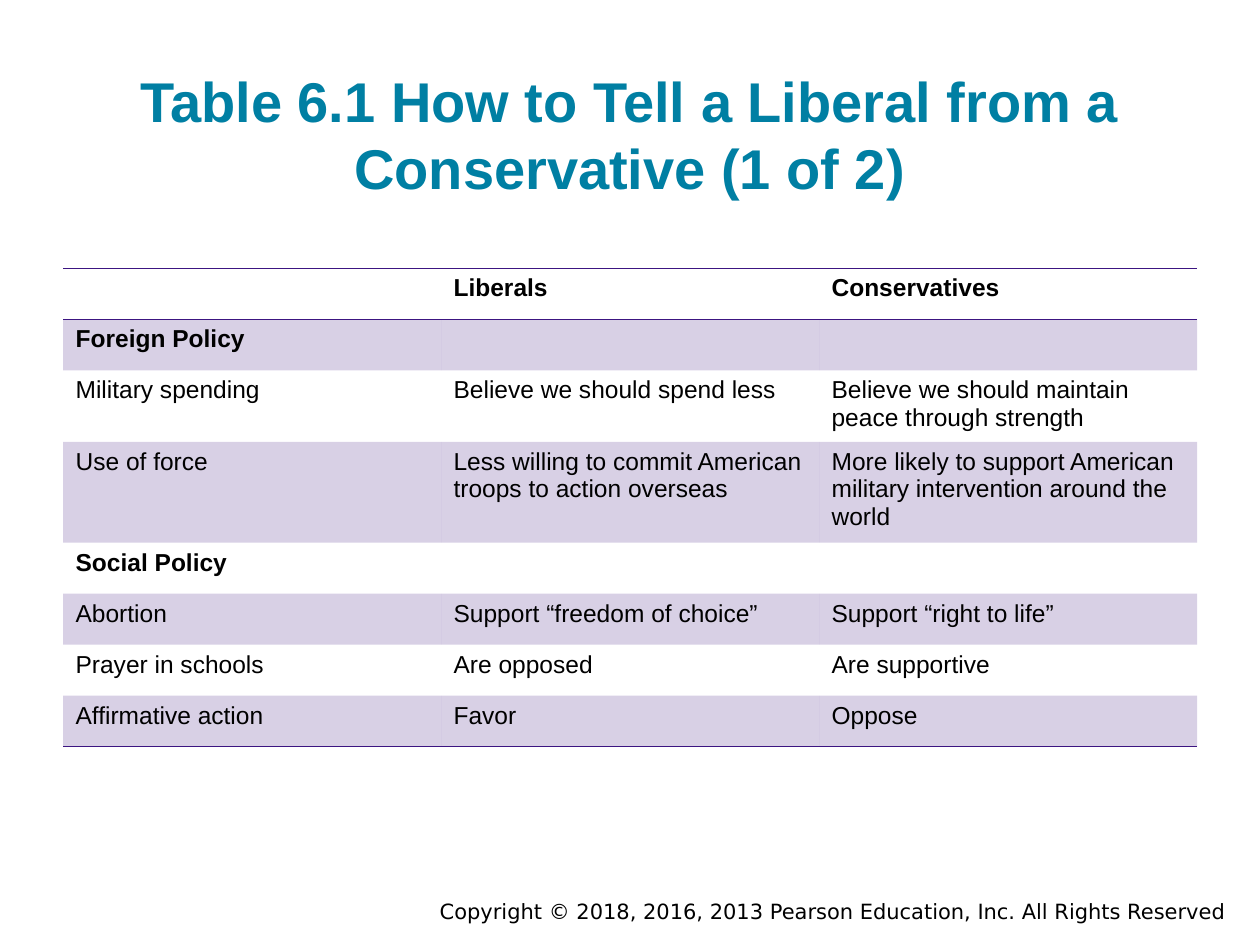
from lxml import etree
from pptx import Presentation
from pptx import util as u
from pptx.dml.color import RGBColor
from pptx.enum import text
from pptx.oxml import ns

TEAL = RGBColor(0x00, 0x7F, 0xA3)
PLUM = RGBColor(0x3C, 0x15, 0x81)
BLACK = RGBColor(0, 0, 0)
NO_STYLE = "{2D5ABB26-0587-4C30-8999-92F81FD0307C}"

deck = Presentation()
deck.slide_width, deck.slide_height = u.Inches(10), u.Inches(7.5)
W, H = deck.slide_width, deck.slide_height
slide = deck.slides.add_slide(deck.slide_layouts[6])


def write(frame, words, size=14, bold=False, color=BLACK, face="Arial",
          align=text.PP_ALIGN.LEFT):
    para = frame.paragraphs[0]
    para.alignment = align
    para.font.size = u.Pt(size)
    if words:
        run = para.add_run()
        run.text = words
        font = run.font
        font.size, font.bold, font.name = u.Pt(size), bold, face
        font.color.rgb = color


def rule(cell, side):
    line = etree.SubElement(cell._tc.get_or_add_tcPr(), ns.qn("a:" + side),
                            w=str(u.Pt(1)))
    fill = etree.SubElement(line, ns.qn("a:solidFill"))
    etree.SubElement(fill, ns.qn("a:srgbClr"), val=str(PLUM))


# Copyright line
foot = slide.shapes.add_textbox(int(W * 0.2), int(H * 0.944),
                                int(W * 0.783), int(H * 0.04)).text_frame
foot.word_wrap = True
write(foot, "Copyright © 2018, 2016, 2013 Pearson Education, Inc. All Rights Reserved",
      size=12, face="DejaVu Sans", align=text.PP_ALIGN.RIGHT)

# Title
head = slide.shapes.add_textbox(int(W * 0.05), int(H * 0.056),
                                int(W * 0.9), int(H * 0.17)).text_frame
head.word_wrap = True
head.vertical_anchor = text.MSO_ANCHOR.BOTTOM
head.margin_top = head.margin_bottom = u.Inches(0.1)
write(head, "Table 6.1 How to Tell a Liberal from a Conservative (1 of 2)",
      size=32, bold=True, color=TEAL, align=text.PP_ALIGN.CENTER)

# Comparison table
ROWS = [
    ("", "Liberals", "Conservatives"),
    ("Foreign Policy", "", ""),
    ("Military spending", "Believe we should spend less",
     "Believe we should maintain peace through strength"),
    ("Use of force", "Less willing to commit American troops to action overseas",
     "More likely to support American military intervention around the world"),
    ("Social Policy", "", ""),
    ("Abortion", "Support “freedom of choice”", "Support “right to life”"),
    ("Prayer in schools", "Are opposed", "Are supportive"),
    ("Affirmative action", "Favor", "Oppose"),
]
HEADS = ("Foreign Policy", "Social Policy")
last = len(ROWS) - 1
row_h = int(H * 0.054)
grid = slide.shapes.add_table(len(ROWS), 3, int(W * 0.05), int(H * 0.284),
                              int(W * 0.9), row_h * len(ROWS)).table
grid._tbl.tblPr.find(ns.qn("a:tableStyleId")).text = NO_STYLE

for r, row in enumerate(ROWS):
    grid.rows[r].height = row_h
    for c, words in enumerate(row):
        cell = grid.cell(r, c)
        write(cell.text_frame, words, bold=r == 0 or words in HEADS)
        if r == 0:
            rule(cell, "lnT")
        if r in (0, last):
            rule(cell, "lnB")
        # Odd rows carry a 20 % tint
        if r % 2:
            cell.fill.solid()
            cell.fill.fore_color.rgb = PLUM
            tint = cell._tc.tcPr.find(ns.qn("a:solidFill"))[0]
            etree.SubElement(tint, ns.qn("a:alpha"), val="20000")
        else:
            cell.fill.background()

deck.save("out.pptx")
